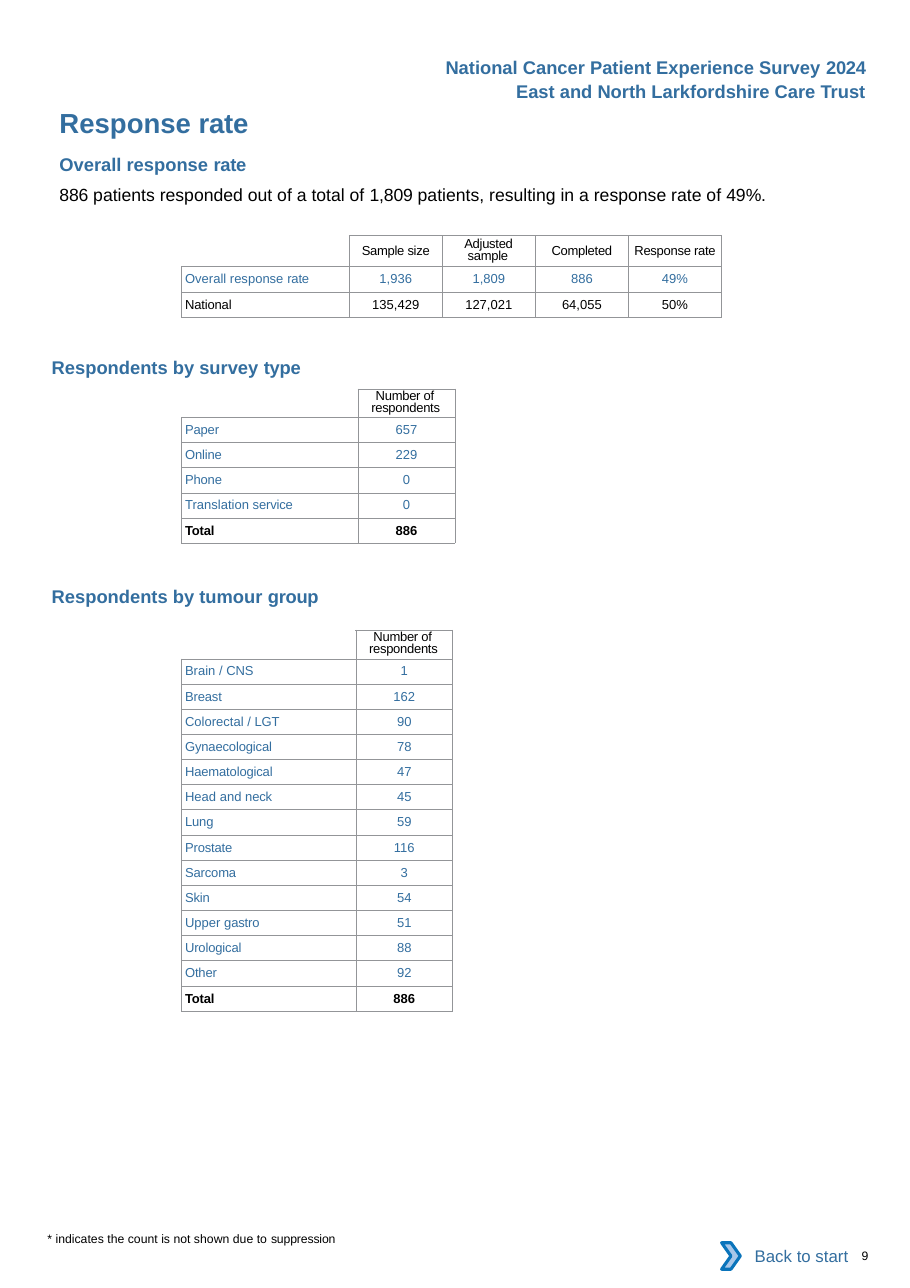
from lxml import etree
from pptx import Presentation
from pptx import util as u
from pptx.dml.color import RGBColor
from pptx.enum import shapes, text
from pptx.oxml.ns import qn

PX = 9144  # EMU per px, 100 px to the inch
FONT = "Arial"
BLUE = RGBColor(0x33, 0x6E, 0x9F)
BLACK = RGBColor(0, 0, 0)
WHITE = RGBColor(0xFF, 0xFF, 0xFF)
CHEVRON_FILL = RGBColor(0xA8, 0xC7, 0xE9)
CHEVRON_LINE = RGBColor(0x0A, 0x74, 0xBB)
GRID = RGBColor(0x93, 0x95, 0x98)
LEFT, CENTER, RIGHT = text.PP_ALIGN.LEFT, text.PP_ALIGN.CENTER, text.PP_ALIGN.RIGHT

COUNT_HEADER = [("Number of respondents", 12, 4, 1.4)]
SURVEY_TYPES = [("Paper", 657), ("Online", 229), ("Phone", 0),
                ("Translation service", 0)]
TUMOUR_GROUPS = [("Brain / CNS", 1), ("Breast", 162), ("Colorectal / LGT", 90),
                 ("Gynaecological", 78), ("Haematological", 47),
                 ("Head and neck", 45), ("Lung", 59), ("Prostate", 116),
                 ("Sarcoma", 3), ("Skin", 54), ("Upper gastro", 51),
                 ("Urological", 88), ("Other", 92)]


def px(*lengths):
    return [round(length * PX) for length in lengths]


def last_word_tight(words, spacing=-0.2):
    """Split into runs so that only the last word has tighter letters."""
    head, space, tail = words.rpartition(" ")
    return [(head + space, 0), (tail, spacing)] if head else [(tail, spacing)]


def write(paragraph, runs, size, color, bold=False, align=LEFT,
          margin=0, indent=0, before=0):
    paragraph.alignment = align
    paragraph.space_before = u.Pt(before)
    properties = paragraph._p.get_or_add_pPr()
    properties.set("marL", str(margin * PX))
    properties.set("indent", str(indent * PX))
    for words, spacing in runs:
        run = paragraph.add_run()
        run.text = words
        run.font.name = FONT
        run.font.size = u.Pt(size)
        run.font.bold = bold
        run.font.color.rgb = color
        run._r.get_or_add_rPr().set("spc", str(round(spacing * 100)))


def set_frame(frame, inset=0, wrap=True):
    frame.margin_left = frame.margin_right = inset * PX
    frame.margin_top = frame.margin_bottom = inset // 2 * PX
    frame.vertical_anchor = text.MSO_ANCHOR.TOP
    frame.word_wrap = wrap
    frame.auto_size = text.MSO_AUTO_SIZE.SHAPE_TO_FIT_TEXT


def add_text(slide, box, runs, size, color, inset=0, wrap=True, **style):
    frame = slide.shapes.add_textbox(*px(*box)).text_frame
    set_frame(frame, inset, wrap)
    write(frame.paragraphs[0], runs, size, color, **style)


def add_title(slide, box, words):
    title = slide.shapes.title
    title.left, title.top, title.width, title.height = px(*box)
    set_frame(title.text_frame)
    write(title.text_frame.paragraphs[0], last_word_tight(words), 18, BLUE,
          bold=True, margin=1, before=9.8)


def add_heading(slide, box, words, before=1):
    add_text(slide, box, last_word_tight(words), 12, BLUE, bold=True,
             margin=1, before=before)


def format_cell(cell, sides="LRTB"):
    cell.margin_left = cell.margin_right = cell.margin_top = cell.margin_bottom = 0
    cell.vertical_anchor = text.MSO_ANCHOR.MIDDLE
    properties = cell._tc.get_or_add_tcPr()
    for side in sides:
        border = etree.SubElement(properties, qn(f"a:ln{side}"), w="6350")
        fill = etree.SubElement(border, qn("a:solidFill"))
        etree.SubElement(fill, qn("a:srgbClr"), val=str(GRID))
    cell.fill.background()
    return cell.text_frame.paragraphs[0]


def add_counts(slide, box, label_width, header_height, headers, rows):
    """Headers are (words, margin, indent, space before), centred if margin is None;
    rows are (label, values, color, bold)."""
    width, height = box[2:]
    table = slide.shapes.add_table(len(rows) + 1, len(headers) + 1, *px(*box)).table
    table.first_row = table.horz_banding = False
    for index, column in enumerate(table.columns):
        column.width = px((width - label_width) / len(headers) if index else label_width)[0]
    for index, row in enumerate(table.rows):
        row.height = px((height - header_height) / len(rows) if index else header_height)[0]

    corner = format_cell(table.cell(0, 0), "RB")
    corner.font.size = u.Pt(8.5)
    for column, (words, margin, indent, before) in enumerate(headers, 1):
        paragraph = format_cell(table.cell(0, column))
        centred = margin is None
        write(paragraph, [(words, -0.2)], 8.5, BLACK, before=before,
              align=CENTER if centred else LEFT, margin=margin or 0, indent=indent)
        if not centred:
            paragraph.line_spacing = u.Pt(7.6)
    for index, (label, values, color, bold) in enumerate(rows, 1):
        write(format_cell(table.cell(index, 0)), last_word_tight(label, -0.1),
              8.5, color, bold, margin=3, before=2)
        for column, value in enumerate(values, 1):
            write(format_cell(table.cell(index, column)), [(value, 0)],
                  8.5, color, bold, align=CENTER, before=2)


def add_respondents(slide, box, label_width, counts):
    rows = [(label, [str(count)], BLUE, False) for label, count in counts]
    total = sum(count for _, count in counts)
    rows.append(("Total", [str(total)], BLACK, True))
    add_counts(slide, box, label_width, 26, COUNT_HEADER, rows)


def add_survey_header(slide, right, top):
    add_text(slide, (right - 350, top + 22, 350, 30),
             [("East and North Larkfordshire Care Trust", 0)], 12, BLUE,
             inset=10, wrap=False, bold=True, align=RIGHT)
    add_text(slide, (right - 404, top, 404, 30),
             last_word_tight("National Cancer Patient Experience Survey 2024"),
             12, BLUE, inset=10, wrap=False, bold=True, align=RIGHT)


def add_back_to_start(slide, left, top):
    group = slide.shapes.add_group_shape().shapes
    label = group.add_shape(shapes.MSO_SHAPE.RECTANGLE, *px(left + 7, top, 118, 42))
    label.fill.solid()
    label.fill.fore_color.rgb = WHITE
    label.line.fill.background()
    label.text_frame.vertical_anchor = text.MSO_ANCHOR.MIDDLE
    write(label.text_frame.paragraphs[0], [("Back to start", 0)], 11, BLUE, align=RIGHT)
    chevron = group.add_shape(shapes.MSO_SHAPE.CHEVRON, *px(left, top + 9, 17, 24))
    chevron.fill.solid()
    chevron.fill.fore_color.rgb = CHEVRON_FILL
    chevron.line.color.rgb = CHEVRON_LINE
    chevron.line.width = u.Pt(2)
    for shape in (label, chevron):
        shape.shadow.inherit = False


def add_footer(slide, left, top):
    add_text(slide, (left, top, 265, 13),
             last_word_tight("* indicates the count is not shown due to suppression", -0.1),
             8, BLACK, margin=1, before=1)
    add_back_to_start(slide, left + 613, top + 1)
    add_text(slide, (left + 730, top + 15, 51, 13), [("9", -0.2)], 8, BLACK,
             margin=10, before=0.2)


def add_overall_rate(slide, left, top):
    add_heading(slide, (left, top, 413, 20), "Overall response rate", before=6.6)
    add_text(slide, (left, top + 28, 720, 19),
             [("886 ", -0.1), ("patients responded out of a total of ", 0),
              ("1,809 ", -0.1), ("patients, resulting in a response rate of ", 0),
              ("49", -0.1), ("%.", -0.2)], 11.5, BLACK, margin=1, before=6)
    headers = [("Sample size", None, 0, 4.7), ("Adjusted sample", 23, -3, 2.3),
               ("Completed", None, 0, 4.7), ("Response rate", None, 0, 4.7)]
    rows = [("Overall response rate", ["1,936", "1,809", "886", "49%"], BLUE, False),
            ("National", ["135,429", "127,021", "64,055", "50%"], BLACK, False)]
    add_counts(slide, (left + 112, top + 75, 490, 74), 152, 28, headers, rows)


def main():
    deck = Presentation()
    deck.slide_width, deck.slide_height = px(826, 1169)
    slide = deck.slides.add_slide(deck.slide_layouts[5])
    add_title(slide, (53, 96, 413, 30), "Response rate")
    add_overall_rate(slide, 53, 139)
    add_heading(slide, (46, 323, 230, 20), "Respondents by survey type")
    add_respondents(slide, (165, 353, 248, 140), 160, SURVEY_TYPES)
    add_heading(slide, (46, 531, 246, 20), "Respondents by tumour group")
    add_respondents(slide, (165, 572, 246, 346), 158, TUMOUR_GROUPS)
    add_survey_header(slide, 796, 46)
    add_footer(slide, 42, 1118)
    deck.save("out.pptx")


if __name__ == "__main__":
    main()
